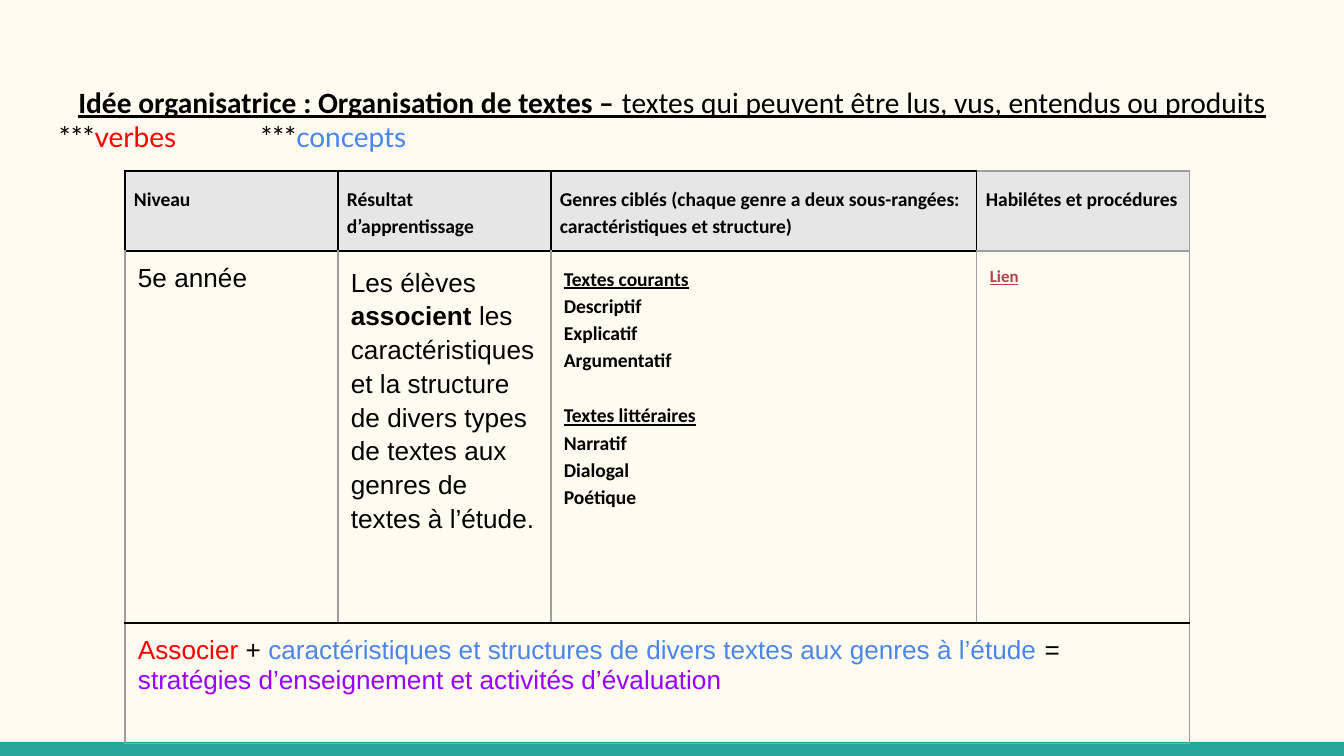
"""Build the slide on text organisation for grade five."""
from dataclasses import dataclass

from lxml.etree import SubElement
from pptx import Presentation
from pptx.dml.color import RGBColor
from pptx.enum.shapes import MSO_SHAPE
from pptx.enum.text import PP_ALIGN
from pptx.oxml.ns import qn
from pptx.util import Pt

PX = 914400 * 10 / 1344


@dataclass(frozen=True)
class Theme:
    paper: str = "FFFBF0"
    bar: str = "26A69A"
    header: str = "E7E6E6"
    black: str = "000000"
    grey: str = "9E9E9E"
    verb: str = "FF0000"
    concept: str = "4A86E8"
    strategy: str = "9900FF"
    link: str = "AF4345"
    title_size: float = 15.8
    legend_size: float = 15
    body_size: float = 14
    label_size: float = 10.5
    link_size: float = 9
    border: float = 0.75


theme = Theme()


def px(*lengths):
    return [round(length * PX) for length in lengths]


def write(frame, paragraphs):
    for index, (layout, spans) in enumerate(paragraphs):
        para = frame.paragraphs[0] if index == 0 else frame.add_paragraph()
        for name, value in layout.items():
            setattr(para, name, value)
        for text, style, color in spans:
            span = para.add_run()
            span.text = text
            for name, value in style.items():
                setattr(span.font, name, value)
            span.font.color.rgb = RGBColor.from_string(color)


title = {"name": "Calibri", "size": Pt(theme.title_size), "underline": True}
legend = {"name": "Lato", "size": Pt(theme.legend_size)}
body = {"name": "Arial", "size": Pt(theme.body_size), "bold": False}
label = {"name": "Calibri", "size": Pt(theme.label_size), "bold": True}
heading = {**label, "underline": True}
link = {**heading, "size": Pt(theme.link_size)}
spaced = {"line_spacing": 1.15}
gap = {**spaced, "space_before": Pt(14.7)}

deck = Presentation()
deck.slide_width, deck.slide_height = px(1344, 756)
page = deck.slides.add_slide(deck.slide_layouts[6])
page.background.fill.solid()
page.background.fill.fore_color.rgb = RGBColor.from_string(theme.paper)

bar = page.shapes.add_shape(MSO_SHAPE.RECTANGLE, *px(0, 742, 1344, 14))
bar.shadow.inherit = False
bar.fill.solid()
bar.fill.fore_color.rgb = RGBColor.from_string(theme.bar)
bar.line.fill.background()

box = page.shapes.add_textbox(*px(46, 66, 1253, 90))
frame = box.text_frame
frame.word_wrap = True
for side in ("left", "top", "right", "bottom"):
    setattr(frame, f"margin_{side}", px(13)[0])
write(frame, [
    ({**spaced, "alignment": PP_ALIGN.CENTER}, [
        ("Idée organisatrice : Organisation de textes – ", {**title, "bold": True}, theme.black),
        ("textes qui peuvent être lus, vus, entendus ou produits", title, theme.black),
    ]),
    ({"alignment": PP_ALIGN.LEFT}, [
        ("***", legend, theme.black),
        ("verbes", legend, theme.verb),
        ("\t\t***", legend, theme.black),
        ("concepts", legend, theme.concept),
    ]),
])

headers = [
    "Niveau",
    "Résultat d’apprentissage",
    "Genres ciblés (chaque genre a deux sous-rangées: caractéristiques et structure)",
    "Habilétes et procédures",
]
genres = {
    "Textes courants": ["Descriptif", "Explicatif", "Argumentatif"],
    "Textes littéraires": ["Narratif", "Dialogal", "Poétique"],
}
genre_lines = []
for family, members in genres.items():
    genre_lines.append((gap if genre_lines else spaced, [(family, heading, theme.black)]))
    genre_lines += [(spaced, [(member, label, theme.black)]) for member in members]

contents = [
    [[(spaced, [(text, label, theme.black)])] for text in headers],
    [
        [({}, [("5e année", body, theme.black)])],
        [(spaced, [
            ("Les élèves ", body, theme.black),
            ("associent", {**body, "bold": True}, theme.black),
            (" les caractéristiques et la structure de divers types de textes"
             " aux genres de textes à l’étude.", body, theme.black),
        ])],
        genre_lines,
        [(spaced, [("Lien", link, theme.link)])],
    ],
    [
        [({}, [
            ("Associer ", body, theme.verb),
            ("+", body, theme.black),
            (" caractéristiques et structures de divers textes aux genres à l’étude ",
             body, theme.concept),
            ("= ", body, theme.black),
            ("stratégies d’enseignement et activités d’évaluation", body, theme.strategy),
        ])],
        [], [], [],
    ],
]

widths = px(213, 213, 426, 213)
heights = px(70, 372, 121)
table = page.shapes.add_table(3, 4, *px(125, 171), sum(widths), sum(heights)).table
table.first_row = table.horz_banding = False
for column, width in zip(table.columns, widths):
    column.width = width
for row, height in zip(table.rows, heights):
    row.height = height
table.cell(2, 0).merge(table.cell(2, 3))

for i, cells in enumerate(contents):
    for j, paragraphs in enumerate(cells):
        cell = table.cell(i, j)
        cell.margin_left = cell.margin_right = px(9 if i == 0 else 13)[0]
        cell.margin_top = cell.margin_bottom = px(13)[0]
        write(cell.text_frame, paragraphs)
        framed = i == 0 and j < 3
        edges = {
            "a:lnL": theme.black if i == 0 else theme.grey,
            "a:lnR": theme.black if framed else theme.grey,
            "a:lnT": theme.black if framed or i == 2 or (i == 1 and j < 3) else theme.grey,
            "a:lnB": theme.black if framed or i == 1 else theme.grey,
        }
        properties = cell._tc.get_or_add_tcPr()
        for tag, color in edges.items():
            line = SubElement(properties, qn(tag), w=str(Pt(theme.border)))
            SubElement(SubElement(line, qn("a:solidFill")), qn("a:srgbClr"), val=color)
        if i == 0:
            cell.fill.solid()
            cell.fill.fore_color.rgb = RGBColor.from_string(theme.header)
        else:
            cell.fill.background()

deck.save("out.pptx")
